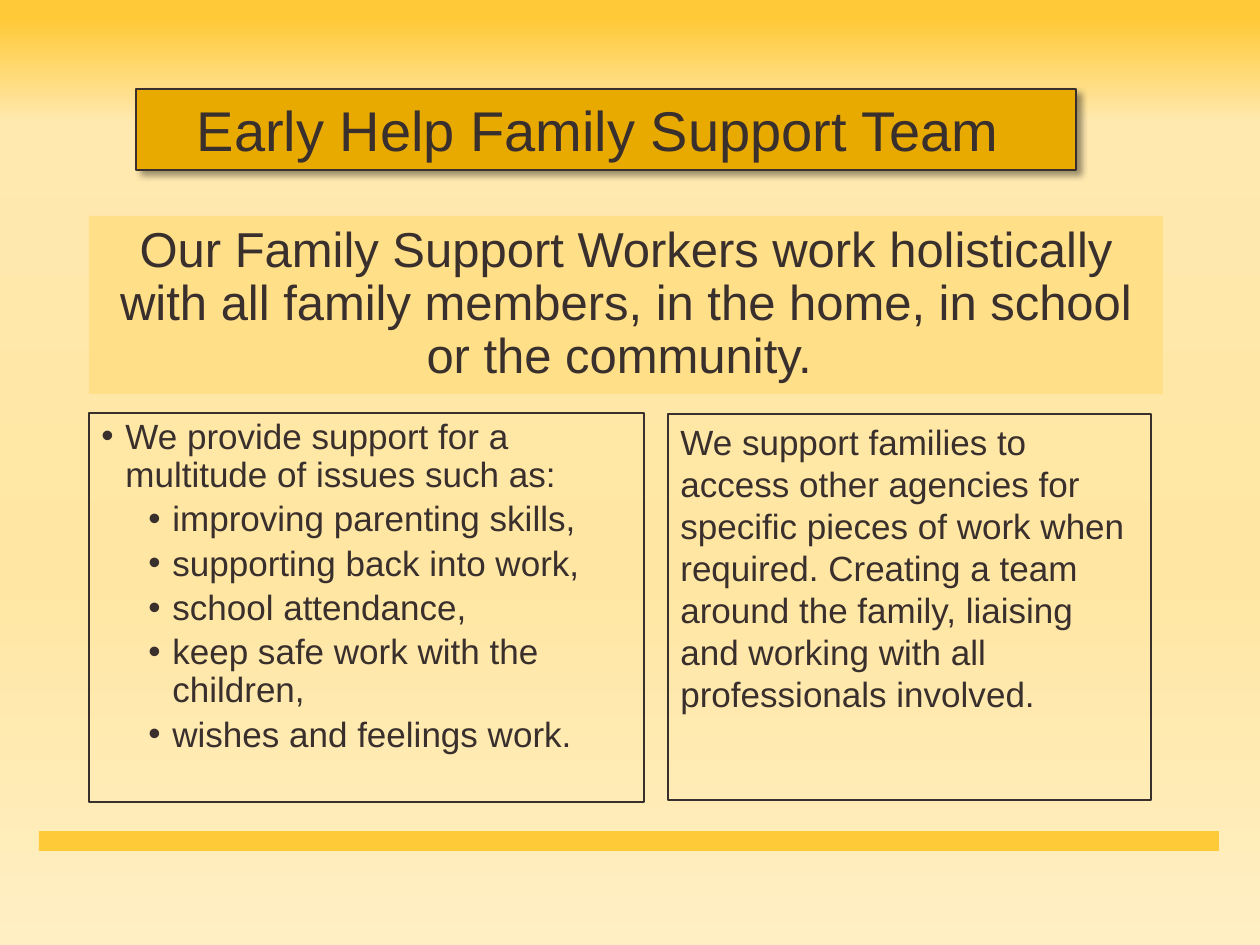
"""Build the Early Help Family Support Team slide."""
from lxml.etree import SubElement
from pptx import Presentation
from pptx.dml.color import RGBColor
from pptx.enum.shapes import MSO_SHAPE as SHAPE
from pptx.enum.text import MSO_ANCHOR as ANCHOR, PP_ALIGN as ALIGN
from pptx.oxml.ns import qn
from pptx.util import Pt

PX = 914400 // 126
INK = "392F2C"


def color(value):
    return RGBColor.from_string(value)


def add_box(left, top, width, height, fill=None, line=None):
    shape = slide.shapes.add_shape(
        SHAPE.RECTANGLE, *(length * PX for length in (left, top, width, height)))
    shape.shadow.inherit = False
    if fill:
        shape.fill.solid()
        shape.fill.fore_color.rgb = color(fill)
    else:
        shape.fill.background()
    if line:
        shape.line.color.rgb = color(line)
        shape.line.width = Pt(0.75)
    else:
        shape.line.fill.background()
    return shape


presentation = Presentation()
presentation.slide_width = 1260 * PX
presentation.slide_height = 945 * PX
slide = presentation.slides.add_slide(presentation.slide_layouts[6])

background = slide.background.fill
background.gradient()
background.gradient_angle = 270
stops = slide.element.find(".//" + qn("a:gsLst"))
for stop in list(stops):
    stops.remove(stop)
for position, value in ((2, "FFC937"), (13, "FFE9AF"), (61, "FFE6A3"), (100, "FFEFC3")):
    stop = SubElement(stops, qn("a:gs"), pos=str(position * 1000))
    SubElement(stop, qn("a:srgbClr"), val=value)

add_box(39, 831, 1180, 20, fill="FFCA38")
summary = add_box(89, 216, 1074, 178, fill="FFDF87")
issues = add_box(89, 413, 555, 389, line=INK)
heading = add_box(136, 89, 940, 81, fill="E9AA00", line=INK)
agencies = add_box(668, 414, 483, 386, line=INK)

effects = heading._element.spPr.find(qn("a:effectLst"))
shadow = SubElement(effects, qn("a:outerShdw"), blurRad=str(Pt(4)), dist=str(Pt(3)),
                    dir=str(45 * 60000), algn="tl", rotWithShape="0")
shadow_color = SubElement(shadow, qn("a:srgbClr"), val="000000")
SubElement(shadow_color, qn("a:alpha"), val="40000")

centered = {"alignment": ALIGN.CENTER}
tight = {"alignment": ALIGN.LEFT, "line_spacing": 0.9}
sub_item = {**tight, "level": 1, "space_before": Pt(3.8)}
texts = (
    (summary, ANCHOR.MIDDLE, 28, [
        ("Our Family Support Workers work holistically with all family members, "
         "in the home, in school or the community. ", {**centered, "line_spacing": 0.9}, None)]),
    (issues, ANCHOR.TOP, 20, [
        ("We provide support for a multitude of issues such as:", tight, 24),
        ("improving parenting skills,", sub_item, 71),
        ("supporting back into work,", sub_item, 71),
        ("school attendance,", sub_item, 71),
        ("keep safe work with the children,", sub_item, 71),
        ("wishes and feelings work.", sub_item, 71)]),
    (heading, ANCHOR.TOP, 32, [("Early Help Family Support Team ", centered, None)]),
    (agencies, ANCHOR.TOP, 20, [
        ("We support families to access other agencies for specific pieces of work "
         "when required. Creating a team around the family, liaising and working "
         "with all professionals involved.", {"alignment": ALIGN.LEFT}, None)]),
)
for shape, anchor, size, paragraphs in texts:
    frame = shape.text_frame
    frame.word_wrap = True
    frame.vertical_anchor = anchor
    for index, (text, layout, indent) in enumerate(paragraphs):
        paragraph = frame.add_paragraph() if index else frame.paragraphs[0]
        for name, value in layout.items():
            setattr(paragraph, name, value)
        if indent:
            properties = paragraph._p.get_or_add_pPr()
            properties.set("marL", str(indent * PX))
            properties.set("indent", str(-24 * PX))
            SubElement(properties, qn("a:buFont"), typeface="Arial")
            SubElement(properties, qn("a:buChar"), char="•")
        run = paragraph.add_run()
        run.text = text
        for name, value in {"name": "Arial", "size": Pt(size)}.items():
            setattr(run.font, name, value)
        run.font.color.rgb = color(INK)

presentation.save("out.pptx")
